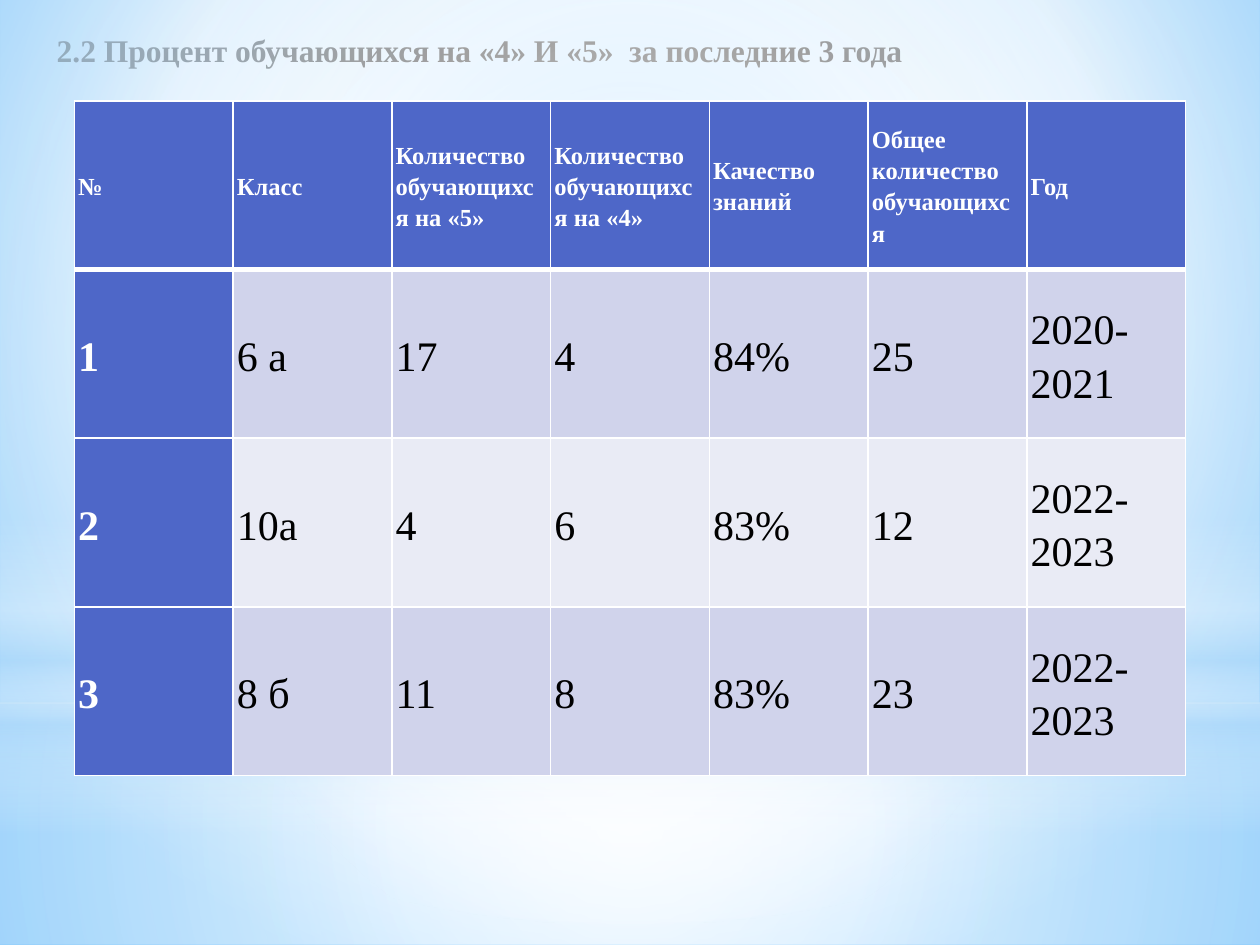
from lxml import etree
from pptx import Presentation
from pptx import util as u
from pptx.dml.color import RGBColor
from pptx.enum import shapes, text
from pptx.oxml import parse_xml
from pptx.oxml.ns import nsdecls, qn

Pt = u.Pt
color = RGBColor.from_string


def set_gradient(parent, stops, center=None):
    """Replace the solid fill in parent; stops are (position, colour, opacity) in percent."""
    stop_xml = "".join(
        f'<a:gs pos="{pos * 1000}"><a:srgbClr val="{rgb}">'
        f'<a:alpha val="{opacity * 1000}"/></a:srgbClr></a:gs>'
        for pos, rgb, opacity in stops)
    if center:
        left, top, right, bottom = (c * 1000 for c in center)
        direction = (f'<a:path path="circle"><a:fillToRect l="{left}" t="{top}" '
                     f'r="{right}" b="{bottom}"/></a:path>')
    else:
        direction = '<a:lin ang="5400000" scaled="0"/>'
    gradient = parse_xml(f'<a:gradFill {nsdecls("a")} rotWithShape="1">'
                         f'<a:gsLst>{stop_xml}</a:gsLst>{direction}</a:gradFill>')
    parent.replace(parent.find(qn("a:solidFill")), gradient)


prs = Presentation()
prs.slide_width, prs.slide_height = Pt(720), Pt(540)
slide = prs.slides.add_slide(prs.slide_layouts[5])

# Background
slide.background.fill.solid()
set_gradient(slide.element.xpath(".//p:bgPr")[0],
             [(0, "9ED5FF", 100), (60, "FFFFFF", 100), (100, "5BB9FF", 100)],
             (20, 10, 20, 60))

# Soft light layers: kind, top, height, stops, centre
MIDDLE = (50, 50, 50, 50)
RECT, OVAL = shapes.MSO_SHAPE.RECTANGLE, shapes.MSO_SHAPE.OVAL
layers = [
    (RECT, 401.76, 138.24,
     [(0, "FFFFFF", 91), (37, "FFFFFF", 76), (100, "B4DCFA", 79)], MIDDLE),
    (RECT, 0, 401.76,
     [(0, "FFFFFF", 89), (48, "FFFFFF", 62), (100, "B4DCFA", 79)], MIDDLE),
    (RECT, 296.64, 180,
     [(0, "FFFFFF", 0), (29, "FFFFFF", 30), (45, "B4DCFA", 40),
      (55, "FFFFFF", 26), (65, "B4DCFA", 60), (100, "FFFFFF", 0)], None),
    (OVAL, 126, 401.76, [(0, "FFFFFF", 100), (56, "FFFFFF", 0)], MIDDLE),
]
for kind, top, height, stops, center in layers:
    layer = slide.shapes.add_shape(kind, 0, Pt(top), Pt(720), Pt(height))
    layer.shadow.inherit = False
    layer.line.fill.background()
    layer.fill.solid()
    set_gradient(layer.element.spPr, stops, center)

# Results table
rows = [
    ["№", "Класс", "Количество обучающихся на «5»", "Количество обучающихся на «4»",
     "Качество знаний", "Общее количество обучающихся", "Год"],
    ["1", "6 а", "17", "4", "84%", "25", "2020-2021"],
    ["2", "10а", "4", "6", "83%", "12", "2022-2023"],
    ["3", "8 б", "11", "8", "83%", "23", "2022-2023"],
]
results = slide.shapes.add_table(len(rows), len(rows[0]), Pt(42.5), Pt(57.6),
                                 Pt(635.04), Pt(385.6)).table
for r, row in enumerate(rows):
    for c, value in enumerate(row):
        cell = results.cell(r, c)
        heading = r == 0 or c == 0
        cell.fill.solid()
        cell.fill.fore_color.rgb = color(
            "4E67C8" if heading else "D0D3EB" if r % 2 else "E9EBF5")
        cell.margin_left = cell.margin_right = Pt(2.2)
        cell.margin_top = cell.margin_bottom = 0
        cell.vertical_anchor = text.MSO_ANCHOR.MIDDLE

        cell.text_frame.text = value
        paragraph = cell.text_frame.paragraphs[0]
        paragraph.line_spacing = 1.15
        font = paragraph.runs[0].font
        font.name, font.size, font.bold = "Times New Roman", Pt(14 if r == 0 else 24), heading
        font.color.rgb = color("FFFFFF" if heading else "000000")

        # White borders, with a thick rule under the header
        widths = {"L": 1, "R": 1, "T": 3 if r == 1 else 1, "B": 3 if r == 0 else 1}
        for i, (side, width) in enumerate(widths.items()):
            border = etree.Element(qn(f"a:ln{side}"), w=str(Pt(width)))
            line_fill = etree.SubElement(border, qn("a:solidFill"))
            etree.SubElement(line_fill, qn("a:srgbClr"), val="FFFFFF")
            cell._tc.tcPr.insert(i, border)

# Title
title = slide.shapes.title
title.left, title.top, title.width, title.height = Pt(25.2), Pt(13.9), Pt(674.6), Pt(29.1)
title.text_frame.text = "2.2 Процент обучающихся на «4» И «5»  за последние 3 года"
title.text_frame.auto_size = text.MSO_AUTO_SIZE.NONE
title.text_frame.vertical_anchor = text.MSO_ANCHOR.MIDDLE
heading_line = title.text_frame.paragraphs[0]
heading_line.alignment = text.PP_ALIGN.LEFT
font = heading_line.runs[0].font
font.name, font.size, font.bold = "Times New Roman", Pt(18), True
font.color.rgb = color("000000")

prs.save("out.pptx")
